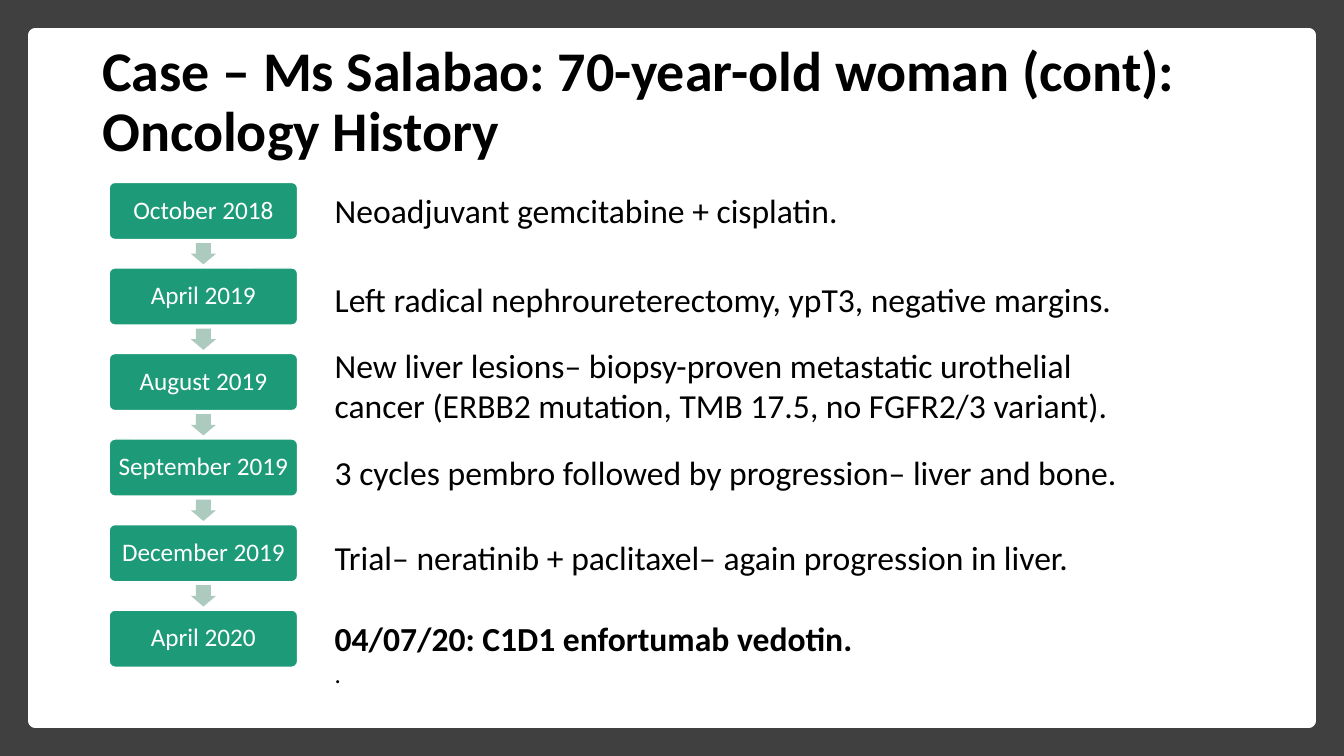
from pptx import Presentation
from pptx.dml.color import RGBColor
from pptx.enum.shapes import MSO_SHAPE
from pptx.enum.text import MSO_ANCHOR, PP_ALIGN
from pptx.util import Pt

RECT = MSO_SHAPE.RECTANGLE
ROUNDED = MSO_SHAPE.ROUNDED_RECTANGLE
DOWN_ARROW = MSO_SHAPE.DOWN_ARROW
TOP, MIDDLE = MSO_ANCHOR.TOP, MSO_ANCHOR.MIDDLE
LEFT, CENTER = PP_ALIGN.LEFT, PP_ALIGN.CENTER

COLORS = {"border": "404040", "paper": "FFFFFF", "text": "000000",
          "date": "1D9A78", "arrow": "ACCABE"}
FONT = "Calibri"
SLIDE_W, SLIDE_H = 960, 540

TITLE = ["Case – Ms Salabao: 70-year-old woman (cont):", "Oncology History"]

# Date, event lines, shift of the event from the top of its date box, format
HISTORY = [
    ("October 2018", ["Neoadjuvant gemcitabine + cisplatin."],
     5, {"spacing": 0.9}),
    ("April 2019", ["Left radical nephroureterectomy, ypT3, negative margins."],
     4.5, {}),
    ("August 2019", ["New liver lesions– biopsy-proven metastatic urothelial cancer "
                     "(ERBB2 mutation, TMB 17.5, no FGFR2/3 variant)."], -9.8, {}),
    ("September 2019", ["3 cycles pembro followed by progression– liver and bone."],
     5.5, {}),
    ("December 2019", ["Trial– neratinib + paclitaxel– again progression in liver."],
     5, {}),
    ("April 2020", ["04/07/20: C1D1 enfortumab vedotin.", "."],
     2.2, {"sizes": (24, 18), "bolds": (True, False)}),
]


def color(name):
    return RGBColor.from_string(COLORS[name])


def write(shape, lines, sizes=(24,), bolds=(False,), ink="text", align=LEFT,
          anchor=TOP, spacing=None, insets=(7.2, 3.6)):
    """Fill a shape with paragraphs; sizes and bolds repeat over the lines."""
    frame = shape.text_frame
    frame.word_wrap = True
    frame.vertical_anchor = anchor
    frame.margin_left = frame.margin_right = Pt(insets[0])
    frame.margin_top = frame.margin_bottom = Pt(insets[1])
    for i, line in enumerate(lines):
        paragraph = frame.paragraphs[0] if i == 0 else frame.add_paragraph()
        paragraph.alignment = align
        if spacing:
            paragraph.line_spacing = spacing
        run = paragraph.add_run()
        run.text = line
        run.font.name = FONT
        run.font.size = Pt(sizes[i % len(sizes)])
        run.font.bold = bolds[i % len(bolds)]
        run.font.color.rgb = color(ink)


def add_block(slide, kind, box, fill, line_width=0):
    block = slide.shapes.add_shape(kind, *map(Pt, box))
    block.shadow.inherit = False
    block.fill.solid()
    block.fill.fore_color.rgb = color(fill)
    if line_width:
        block.line.color.rgb = color("paper")
        block.line.width = Pt(line_width)
    else:
        block.line.fill.background()
    return block


def add_words(slide, box, lines, **style):
    write(slide.shapes.add_textbox(*map(Pt, box)), lines, **style)


def add_background(slide, box, margin=25.2):
    left, top, width, height = box
    add_block(slide, RECT, box, "border")
    add_block(slide, RECT, (left + margin, top + margin, width - 2 * margin,
                            height - 2 * margin), "paper", 10)


def add_title(slide, box):
    add_words(slide, box, TITLE, sizes=(40,), bolds=(True,), anchor=MIDDLE,
              spacing=0.9)


def add_timeline(slide, box):
    left, top, width, height = box
    date_w, date_h, event_indent = 134.6, 40.8, 154
    arrow_w, arrow_h = 18, 15.2
    pitch = (height - date_h) / (len(HISTORY) - 1)
    for i, (date, event, shift, style) in enumerate(HISTORY):
        y = top + i * pitch
        # Date box
        date_box = add_block(slide, ROUNDED, (left, y, date_w, date_h), "date", 1)
        date_box.adjustments[0] = 0.1
        write(date_box, [date], sizes=(18,), ink="paper", align=CENTER,
              anchor=MIDDLE, spacing=0.9, insets=(5, 5))
        # Arrow centred in the gap to the next date
        if i < len(HISTORY) - 1:
            arrow = add_block(slide, DOWN_ARROW,
                              (left + (date_w - arrow_w) / 2,
                               y + (date_h + pitch - arrow_h) / 2,
                               arrow_w, arrow_h), "arrow")
            arrow.adjustments[0] = 0.6
            arrow.adjustments[1] = 0.5
        # Event
        add_words(slide, (left + event_indent, y + shift, width - event_indent,
                          date_h), event, **style)


def main():
    deck = Presentation()
    deck.slide_width, deck.slide_height = Pt(SLIDE_W), Pt(SLIDE_H)
    slide = deck.slides.add_slide(deck.slide_layouts[6])
    add_background(slide, (0, 0, SLIDE_W, SLIDE_H))
    add_timeline(slide, (78, 130.3, 732, 346.3))
    add_title(slide, (66, 21.6, 828, 104.4))
    deck.save("out.pptx")


if __name__ == "__main__":
    main()
